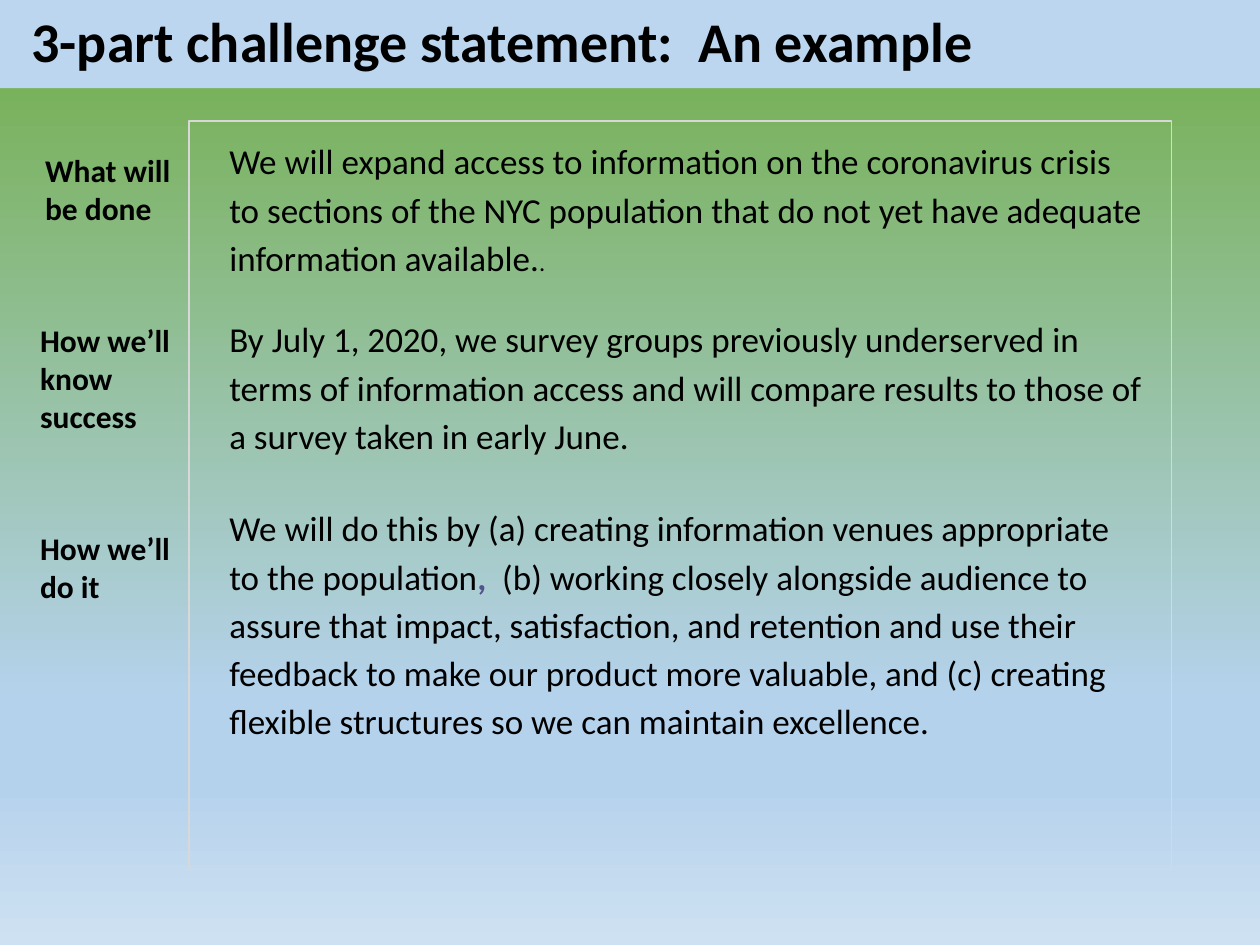
"""Build a slide that shows an example of a three-part challenge statement."""
from dataclasses import dataclass

from lxml import etree
from pptx import Presentation
from pptx.dml.color import RGBColor
from pptx.enum.shapes import MSO_SHAPE
from pptx.enum.text import MSO_ANCHOR, MSO_AUTO_SIZE, PP_ALIGN
from pptx.oxml.ns import qn
from pptx.util import Inches, Pt

RECTANGLE = MSO_SHAPE.RECTANGLE
TOP, MIDDLE = MSO_ANCHOR.TOP, MSO_ANCHOR.MIDDLE
LEFT = PP_ALIGN.LEFT
NO_AUTOFIT = MSO_AUTO_SIZE.NONE


@dataclass(frozen=True)
class Theme:
    font: str = "Calibri"
    ink: str = "000000"
    accent: str = "52528C"
    title_band: str = "BBD6EE"
    frame_line: str = "D8D8D8"
    backdrop: tuple = ((0, "70AD47"), (74, "B5D2EC"), (83, "B5D2EC"), (100, "CEE1F2"))
    title_size: int = 32
    body_size: int = 20
    label_size: int = 18
    small_size: int = 14


THEME = Theme()
WIDTH, HEIGHT = 10, 7.5
TITLE = "3-part challenge statement:  An example"
TITLE_BOX = (0, 0, WIDTH, 0.7)
FRAME_BOX = (1.5, 0.96, 7.8, 5.94)
LABEL_WIDTH, LABEL_LINE, LABEL_PADDING = 1.24, 0.3, 0.1
BODY_INDENT = 0.12

LABELS = [
    (0.26, 1.15, ["What will", "be done"]),
    (0.22, 2.5, ["How we’ll", "know", "success"]),
    (0.22, 4.15, ["How we’ll", "do it"]),
]
STATEMENTS = [
    (0, [
        ("We will expand access to information on the coronavirus crisis to sections of "
         "the NYC population that do not yet have adequate information available.", {}),
        (".", {"size": THEME.small_size}),
    ]),
    (19, [
        ("By July 1, 2020, we survey groups previously underserved in terms of information "
         "access and will compare results to those of a survey taken in early June.", {}),
    ]),
    (25, [
        ("We will do this by (a) creating information venues appropriate to the population", {}),
        (",", {"color": THEME.accent, "bold": True}),
        ("  (b) working closely alongside audience to assure that impact, satisfaction, and "
         "retention and use their feedback to make our product more valuable, and (c) creating "
         "flexible structures so we can maintain excellence.", {}),
    ]),
]


def style_run(run, size, color=THEME.ink, bold=False):
    run.font.name = THEME.font
    run.font.size = Pt(size)
    run.font.bold = bold
    run.font.color.rgb = RGBColor.from_string(color)


def set_frame(text_frame, side, edge, anchor=TOP, wrap=True):
    text_frame.auto_size = NO_AUTOFIT
    text_frame.word_wrap = wrap
    text_frame.vertical_anchor = anchor
    text_frame.margin_left = text_frame.margin_right = Inches(side)
    text_frame.margin_top = text_frame.margin_bottom = Inches(edge)


def paint_background(slide):
    fill = slide.background.fill
    fill.gradient()
    fill.gradient_angle = 270
    stops = slide.element.find(".//" + qn("a:gsLst"))
    for stop in list(stops):
        stops.remove(stop)
    for percent, color in THEME.backdrop:
        stop = etree.SubElement(stops, qn("a:gs"), pos=str(percent * 1000))
        etree.SubElement(stop, qn("a:srgbClr"), val=color)


def add_title(slide):
    title = slide.shapes.title
    title.left, title.top, title.width, title.height = map(Inches, TITLE_BOX)
    title.fill.solid()
    title.fill.fore_color.rgb = RGBColor.from_string(THEME.title_band)
    set_frame(title.text_frame, 0.25, 0, MIDDLE)
    title.text_frame.text = TITLE
    paragraph = title.text_frame.paragraphs[0]
    paragraph.alignment = LEFT
    paragraph.line_spacing = 0.9
    style_run(paragraph.runs[0], THEME.title_size, bold=True)


def add_statements(slide):
    frame = slide.shapes.add_shape(RECTANGLE, *map(Inches, FRAME_BOX))
    frame.shadow.inherit = False
    frame.fill.background()
    frame.line.color.rgb = RGBColor.from_string(THEME.frame_line)
    frame.line.width = Pt(0.75)
    text_frame = frame.text_frame
    set_frame(text_frame, 0.2, 0.1)
    for index, (space_before, pieces) in enumerate(STATEMENTS):
        paragraph = text_frame.add_paragraph() if index else text_frame.paragraphs[0]
        paragraph.alignment = LEFT
        paragraph.line_spacing = 1.15
        paragraph.space_before = Pt(space_before)
        properties = paragraph._p.get_or_add_pPr()
        properties.set("marL", str(Inches(BODY_INDENT)))
        properties.set("indent", "0")
        for text, changes in pieces:
            run = paragraph.add_run()
            run.text = text
            style_run(run, **{"size": THEME.body_size, **changes})


def add_label(slide, left, top, lines):
    height = LABEL_LINE * len(lines) + LABEL_PADDING
    label = slide.shapes.add_textbox(*map(Inches, (left, top, LABEL_WIDTH, height)))
    set_frame(label.text_frame, 0.1, 0.05, wrap=False)
    label.text_frame.text = "\n".join(lines)
    for paragraph in label.text_frame.paragraphs:
        paragraph.alignment = LEFT
        style_run(paragraph.runs[0], THEME.label_size, bold=True)


def main():
    presentation = Presentation()
    presentation.slide_width, presentation.slide_height = Inches(WIDTH), Inches(HEIGHT)
    slide = presentation.slides.add_slide(presentation.slide_layouts.get_by_name("Title Only"))
    paint_background(slide)
    add_title(slide)
    add_statements(slide)
    for left, top, lines in LABELS:
        add_label(slide, left, top, lines)
    presentation.save("out.pptx")


if __name__ == "__main__":
    main()
